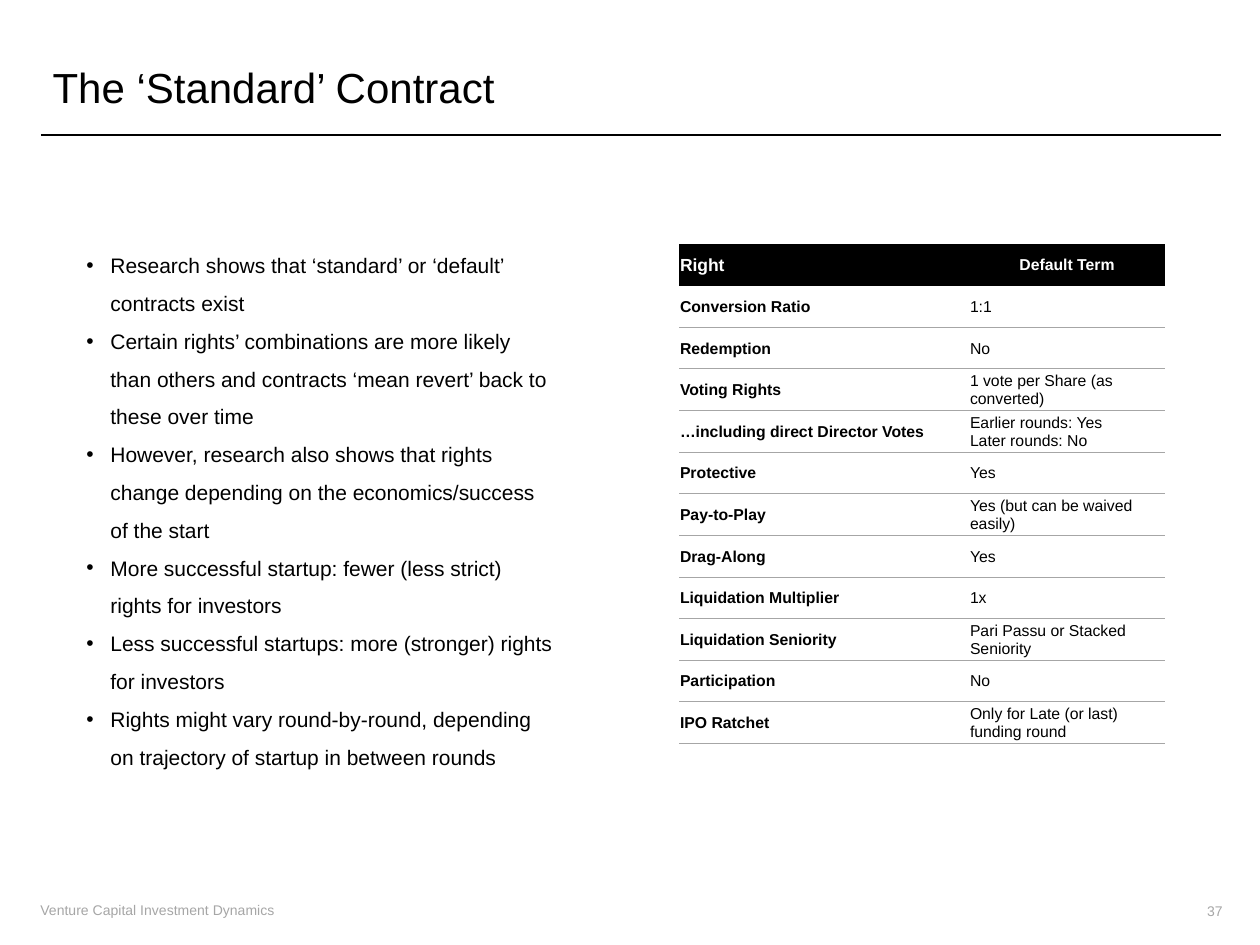
from dataclasses import dataclass

from lxml import etree
from pptx import Presentation
from pptx.dml.color import RGBColor
from pptx.enum.shapes import MSO_CONNECTOR
from pptx.enum.text import MSO_ANCHOR, MSO_AUTO_SIZE, PP_ALIGN
from pptx.oxml.ns import qn
from pptx.util import Emu, Pt

LEFT, CENTER, RIGHT = PP_ALIGN.LEFT, PP_ALIGN.CENTER, PP_ALIGN.RIGHT
TOP, MIDDLE = MSO_ANCHOR.TOP, MSO_ANCHOR.MIDDLE
NO_AUTOFIT = MSO_AUTO_SIZE.NONE
STRAIGHT = MSO_CONNECTOR.STRAIGHT

PX_PER_INCH = 126
TITLE_ONLY = 5
PLAIN_TABLE_STYLE = "{2D5ABB26-0587-4C30-8999-92F81FD0307C}"


@dataclass(frozen=True)
class Theme:
    font: str = "Arial"
    ink: str = "000000"
    paper: str = "FFFFFF"
    muted: str = "A6A6A6"
    title: int = 24
    body: int = 12
    table_head: int = 10
    table: int = 9
    footer: int = 8
    rule: float = 0.75
    hairline: float = 0.5


THEME = Theme()

BULLETS = [
    "Research shows that ‘standard’ or ‘default’ contracts exist",
    "Certain rights’ combinations are more likely than others and contracts "
    "‘mean revert’ back to these over time",
    "However, research also shows that rights change depending on the "
    "economics/success of the start",
    "More successful startup: fewer (less strict) rights for investors",
    "Less successful startups: more (stronger) rights for investors",
    "Rights might vary round-by-round, depending on trajectory of startup "
    "in between rounds",
]

TERMS = [
    ("Right", "Default Term"),
    ("Conversion Ratio", "1:1"),
    ("Redemption", "No"),
    ("Voting Rights", "1 vote per Share (as converted)"),
    ("…including direct Director Votes", "Earlier rounds: Yes\nLater rounds: No"),
    ("Protective", "Yes"),
    ("Pay-to-Play", "Yes (but can be waived easily)"),
    ("Drag-Along", "Yes"),
    ("Liquidation Multiplier", "1x"),
    ("Liquidation Seniority", "Pari Passu or Stacked Seniority"),
    ("Participation", "No"),
    ("IPO Ratchet", "Only for Late (or last) funding round"),
]


def px(n):
    return Emu(round(n * 914400 / PX_PER_INCH))


def rgb(color):
    return RGBColor.from_string(color)


def format_text(tf, size, color, align=LEFT, bold=False):
    for p in tf.paragraphs:
        p.alignment = align
        for r in p.runs:
            r.font.name = THEME.font
            r.font.size = Pt(size)
            r.font.bold = bold
            r.font.color.rgb = rgb(color)


def add_title(s, text, x, y, w, h):
    sp = s.shapes.title
    sp.left, sp.top, sp.width, sp.height = px(x), px(y), px(w), px(h)
    tf = sp.text_frame
    tf.text = text
    tf.auto_size = NO_AUTOFIT
    tf.vertical_anchor = MIDDLE
    format_text(tf, THEME.title, THEME.ink)


def add_text(s, text, x, y, w, h, size, color, align=LEFT, anchor=TOP):
    tf = s.shapes.add_textbox(px(x), px(y), px(w), px(h)).text_frame
    tf.word_wrap = True
    tf.vertical_anchor = anchor
    tf.text = text
    format_text(tf, size, color, align)
    return tf


def add_bullets(s, items, x, y, w, h, indent):
    tf = add_text(s, "\n".join(items), x, y, w, h, THEME.body, THEME.ink)
    for p in tf.paragraphs:
        p.line_spacing = 1.5
        pPr = p._p.get_or_add_pPr()
        pPr.set("marL", str(px(indent)))
        pPr.set("indent", str(-px(indent)))
        etree.SubElement(pPr, qn("a:buFont"), typeface=THEME.font)
        etree.SubElement(pPr, qn("a:buChar"), char="•")


def add_rule(s, x1, x2, y):
    line = s.shapes.add_connector(STRAIGHT, px(x1), px(y), px(x2), px(y))
    line.line.color.rgb = rgb(THEME.ink)
    line.line.width = Pt(THEME.rule)
    etree.SubElement(line._element.spPr, qn("a:effectLst"))


def add_bottom_border(cell):
    ln = etree.Element(qn("a:lnB"), w=str(Pt(THEME.hairline)))
    fill = etree.SubElement(ln, qn("a:solidFill"))
    etree.SubElement(fill, qn("a:srgbClr"), val=THEME.muted)
    cell._tc.get_or_add_tcPr().insert(0, ln)


def format_cell(cell, text, is_head, is_label):
    cell.text = text
    cell.vertical_anchor = MIDDLE
    cell.margin_left = cell.margin_right = cell.margin_top = px(1)
    cell.margin_bottom = 0
    if is_head:
        cell.fill.solid()
        cell.fill.fore_color.rgb = rgb(THEME.ink)
    else:
        cell.fill.background()
        add_bottom_border(cell)
    format_text(
        cell.text_frame,
        THEME.table_head if is_head and is_label else THEME.table,
        THEME.paper if is_head else THEME.ink,
        CENTER if is_head and not is_label else LEFT,
        bold=is_head or is_label,
    )


def add_terms_table(s, rows, x, y, col_widths, h):
    frame = s.shapes.add_table(len(rows), len(col_widths), px(x), px(y),
                               px(sum(col_widths)), px(h))
    table = frame.table
    table.horz_banding = False
    table._tbl.tblPr.find(qn("a:tableStyleId")).text = PLAIN_TABLE_STYLE
    for column, width in zip(table.columns, col_widths):
        column.width = px(width)
    for i, values in enumerate(rows):
        table.rows[i].height = px(h / len(rows))
        for j, text in enumerate(values):
            format_cell(table.cell(i, j), text, is_head=i == 0, is_label=j == 0)


def main():
    prs = Presentation()
    prs.slide_width, prs.slide_height = px(1260), px(945)
    s = prs.slides.add_slide(prs.slide_layouts[TITLE_ONLY])

    # Header
    add_rule(s, 41, 1221, 135)
    add_title(s, "The ‘Standard’ Contract", 40, 43, 956, 88)

    # Content
    add_terms_table(s, TERMS, 679, 244, (290, 196), 500)
    add_bullets(s, BULLETS, 74, 234, 496, 542, indent=24)

    # Footer
    add_text(s, "Venture Capital Investment Dynamics", 28, 895, 348, 30,
             THEME.footer, THEME.muted)
    add_text(s, "37", 1188, 886, 47, 50, THEME.footer, THEME.muted, RIGHT, MIDDLE)

    prs.save("out.pptx")


if __name__ == "__main__":
    main()
